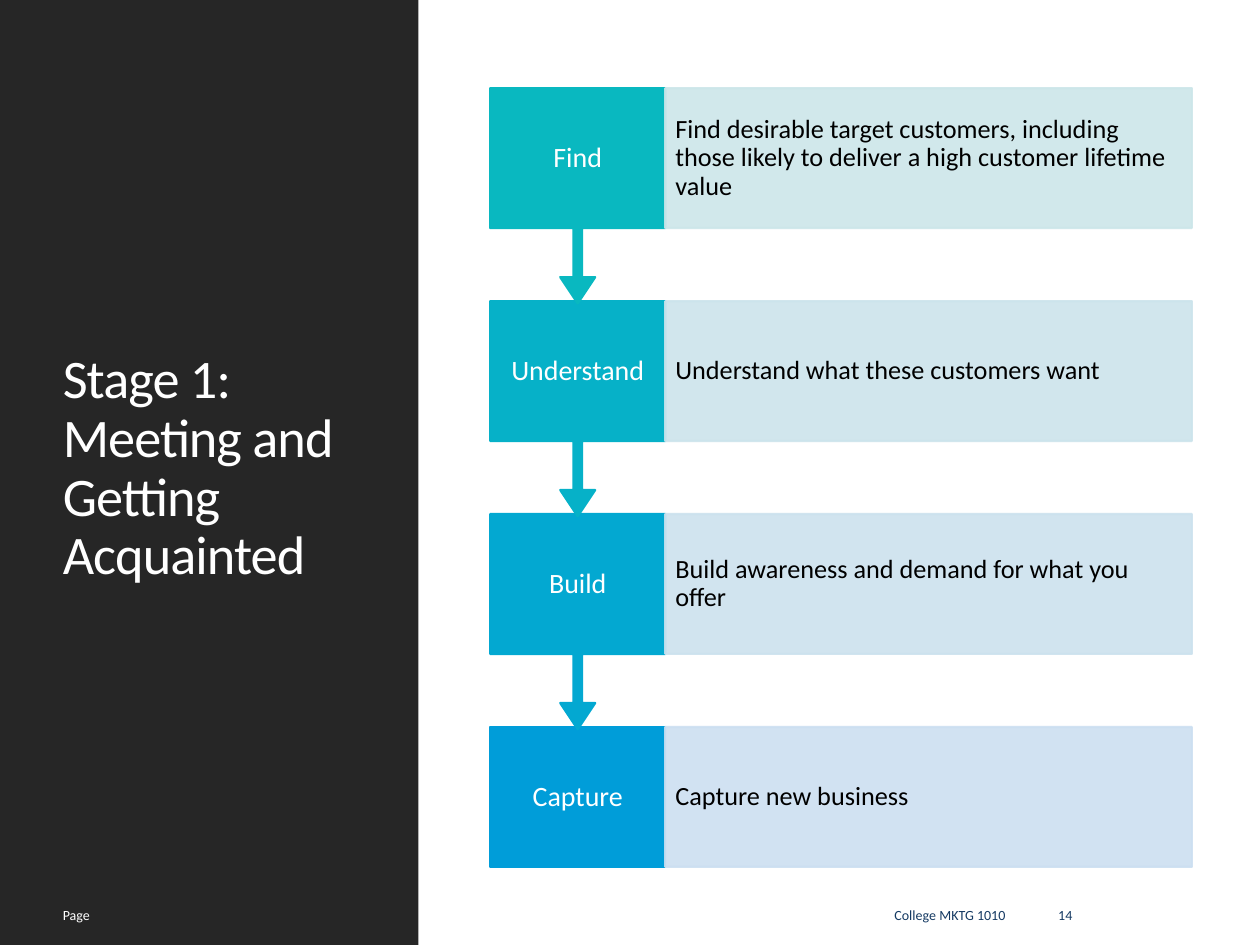
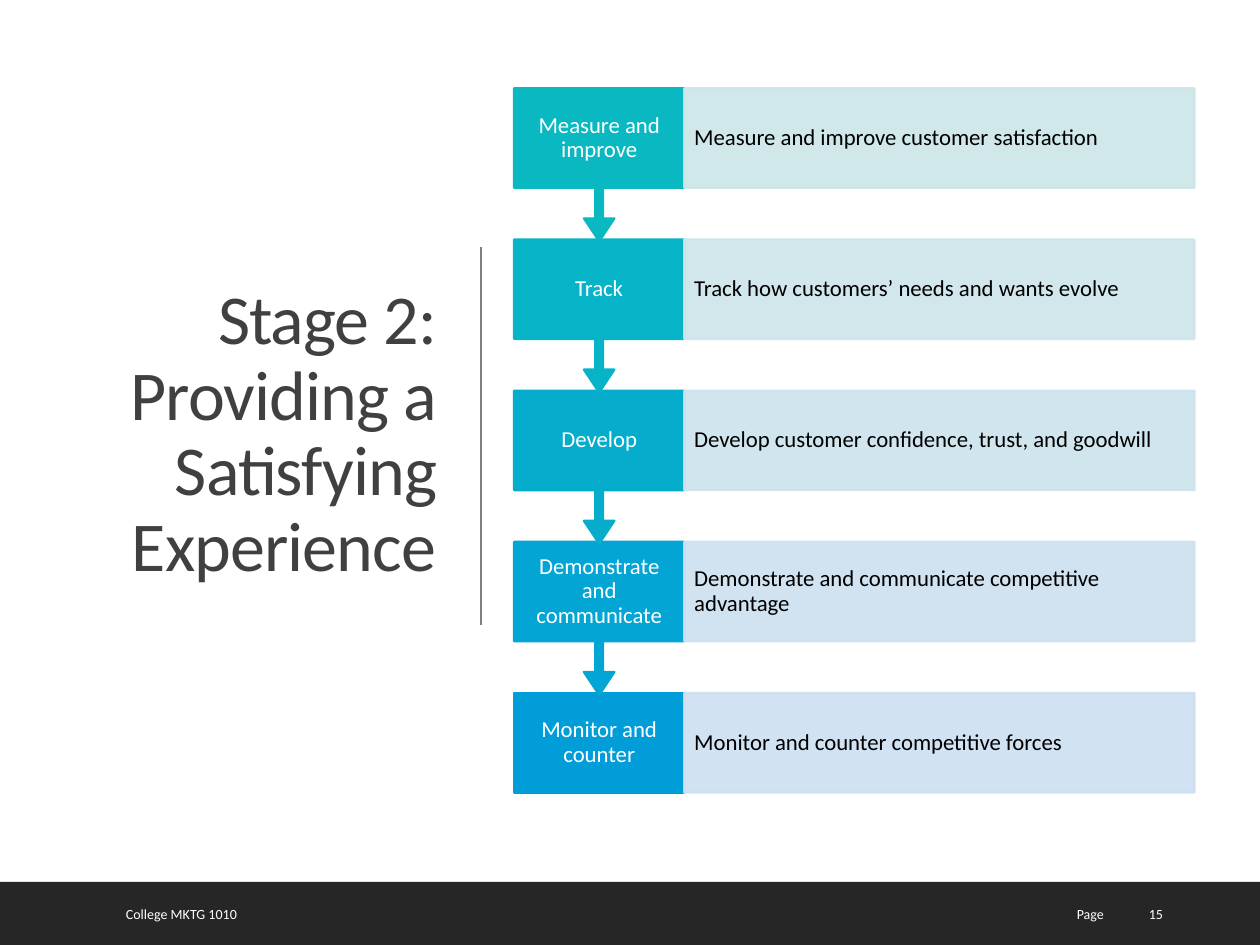
import colorsys
from dataclasses import dataclass

import pptx
import pptx.dml.color
import pptx.enum.shapes
import pptx.enum.text
import pptx.oxml
import pptx.oxml.ns
import pptx.util

Inches = pptx.util.Inches
Pt = pptx.util.Pt
ShapeType = pptx.enum.shapes.MSO_SHAPE
Align = pptx.enum.text.PP_ALIGN


@dataclass(frozen=True)
class Theme:
    font: str = "Calibri"
    dark: str = "262626"
    white: str = "FFFFFF"
    black: str = "000000"
    title_gray: str = "404040"
    rule_gray: str = "808080"
    navy: str = "153A63"
    label_colors: tuple = ("09B8C0", "009DD9")  # first and last step
    detail_colors: tuple = ("CCE6E9", "CCDFF1")
    detail_opacity: int = 90
    footer_size: int = 8
    outline: float = 1.25


THEME = Theme()
COURSE = "College MKTG 1010"

# Boxes are (left, top, width, height) in inches.
SLIDES = [
    {
        "band": (0, 0, 3.32, 7.5),
        "title": {"text": "Stage 1: Meeting and Getting Acquainted",
                  "box": (0.4, 0.57, 2.53, 6.31), "size": 31,
                  "color": THEME.white, "align": Align.LEFT},
        "footers": [
            ("Page", (0.4, 7.06, 1.42, 0.4), THEME.white, Align.LEFT),
            (COURSE, (3.89, 7.06, 4.19, 0.4), THEME.navy, Align.RIGHT),
            ("14", (8.3, 7.06, 0.89, 0.4), THEME.navy, Align.LEFT),
        ],
        "flow": {"left": 3.89, "top": 0.7, "pitch": 1.69, "height": 1.11,
                 "label_width": 1.39, "detail_width": 4.18,
                 "label_size": 16, "detail_size": 15},
        "steps": [
            ("Find", "Find desirable target customers, including those likely "
                     "to deliver a high customer lifetime value"),
            ("Understand", "Understand what these customers want"),
            ("Build", "Build awareness and demand for what you offer"),
            ("Capture", "Capture new business"),
        ],
    },
    {
        "band": (0, 7, 10, 0.5),
        "title": {"text": "Stage 2: Providing a Satisfying Experience",
                  "box": (0.53, 0.69, 3.03, 5.53), "size": 40,
                  "color": THEME.title_gray, "align": Align.RIGHT},
        "rule": (3.82, 1.96, 3.82, 4.96),
        "footers": [
            (COURSE, (0.9, 7.05, 5.59, 0.4), THEME.white, Align.LEFT),
            ("Page", (6.74, 7.05, 2.12, 0.4), THEME.white, Align.RIGHT),
            ("15", (9.02, 7.05, 0.64, 0.4), THEME.white, Align.LEFT),
        ],
        "flow": {"left": 4.08, "top": 0.7, "pitch": 1.2, "height": 0.79,
                 "label_width": 1.35, "detail_width": 4.05,
                 "label_size": 13, "detail_size": 13},
        "steps": [
            ("Measure and improve", "Measure and improve customer satisfaction"),
            ("Track", "Track how customers’ needs and wants evolve"),
            ("Develop", "Develop customer confidence, trust, and goodwill"),
            ("Demonstrate and communicate",
             "Demonstrate and communicate competitive advantage"),
            ("Monitor and counter", "Monitor and counter competitive forces"),
        ],
    },
]

CALLOUT_ADJUSTMENTS = (0.05, 0.1, 0.15, 0.65)  # shaft, head, head length, box share


def rgb(color):
    return pptx.dml.color.RGBColor.from_string(color)


def blend(ends, share):
    """Mix two colours by hue, lightness and saturation."""
    first, last = (
        colorsys.rgb_to_hls(*(channel / 255 for channel in rgb(color))) for color in ends
    )
    mixed = colorsys.hls_to_rgb(*(a + (b - a) * share for a, b in zip(first, last)))
    return "".join(f"{round(channel * 255):02X}" for channel in mixed)


def add_block(slide, kind, box, color, outline=0, opacity=100):
    shape = slide.shapes.add_shape(kind, *map(Inches, box))
    shape.shadow.inherit = False
    shape.fill.solid()
    shape.fill.fore_color.rgb = rgb(color)
    if outline:
        shape.line.color.rgb = rgb(color)
        shape.line.width = Pt(outline)
    else:
        shape.line.fill.background()
    if opacity < 100:
        for node in shape.element.spPr.iter(pptx.oxml.ns.qn("a:srgbClr")):
            alpha = node.makeelement(pptx.oxml.ns.qn("a:alpha"), {"val": str(opacity * 1000)})
            node.append(alpha)
    return shape


def write(shape, text, size, color, align=Align.LEFT, spacing=1.0, margins=(0.1, 0.05)):
    frame = shape.text_frame
    frame.word_wrap = True
    frame.vertical_anchor = pptx.enum.text.MSO_ANCHOR.MIDDLE
    frame.margin_left = frame.margin_right = Inches(margins[0])
    frame.margin_top = frame.margin_bottom = Inches(margins[1])
    paragraph = frame.paragraphs[0]
    paragraph.text = text
    paragraph.alignment = align
    paragraph.line_spacing = spacing
    paragraph.font.name = THEME.font
    paragraph.font.size = Pt(size)
    paragraph.font.color.rgb = rgb(color)
    return paragraph


def add_text(slide, box, *args, **options):
    return write(slide.shapes.add_textbox(*map(Inches, box)), *args, **options)


def add_title(slide, title):
    paragraph = add_text(slide, title["box"], title["text"], title["size"],
                         title["color"], title["align"], spacing=0.9)
    paragraph.runs[0].font._element.set("spc", "-50")


def add_rule(slide, ends):
    line = slide.shapes.add_connector(
        pptx.enum.shapes.MSO_CONNECTOR.STRAIGHT, *map(Inches, ends))
    line.line.color.rgb = rgb(THEME.rule_gray)
    line.line.width = Pt(1)
    properties = line.element.spPr
    properties.append(properties.makeelement(pptx.oxml.ns.qn("a:effectLst"), {}))


def add_flow(slide, flow, steps):
    """Stack the steps from the last up, so each arrow tip lies over the next box."""
    left, height, width = flow["left"], flow["height"], flow["label_width"]
    last = len(steps) - 1
    for index in range(last, -1, -1):
        label, detail = steps[index]
        top = flow["top"] + index * flow["pitch"]
        label_box = (left, top, width, height)
        label_color = blend(THEME.label_colors, index / last)
        if index == last:
            add_block(slide, ShapeType.RECTANGLE, label_box, label_color, THEME.outline)
        else:
            callout_box = (left, top, width, height / CALLOUT_ADJUSTMENTS[-1])
            callout = add_block(slide, ShapeType.UP_ARROW_CALLOUT, callout_box,
                                label_color, THEME.outline)
            callout.rotation = 180
            for position, value in enumerate(CALLOUT_ADJUSTMENTS):
                callout.adjustments[position] = value
        add_text(slide, label_box, label, flow["label_size"], THEME.white,
                 Align.CENTER, spacing=0.9, margins=(0.1, 0.1))
        panel = add_block(slide, ShapeType.RECTANGLE,
                          (left + width, top, flow["detail_width"], height),
                          blend(THEME.detail_colors, index / last),
                          THEME.outline, THEME.detail_opacity)
        write(panel, detail, flow["detail_size"], THEME.black,
              spacing=0.9, margins=(0.08, 0.18))


def main():
    presentation = pptx.Presentation()
    presentation.slide_width = Inches(10)
    presentation.slide_height = Inches(7.5)
    for content in SLIDES:
        slide = presentation.slides.add_slide(presentation.slide_layouts[6])
        add_block(slide, ShapeType.RECTANGLE, content["band"], THEME.dark)
        add_title(slide, content["title"])
        if "rule" in content:
            add_rule(slide, content["rule"])
        for text, box, color, align in content["footers"]:
            add_text(slide, box, text, THEME.footer_size, color, align)
        add_flow(slide, content["flow"], content["steps"])
    presentation.save("out.pptx")


if __name__ == "__main__":
    main()
